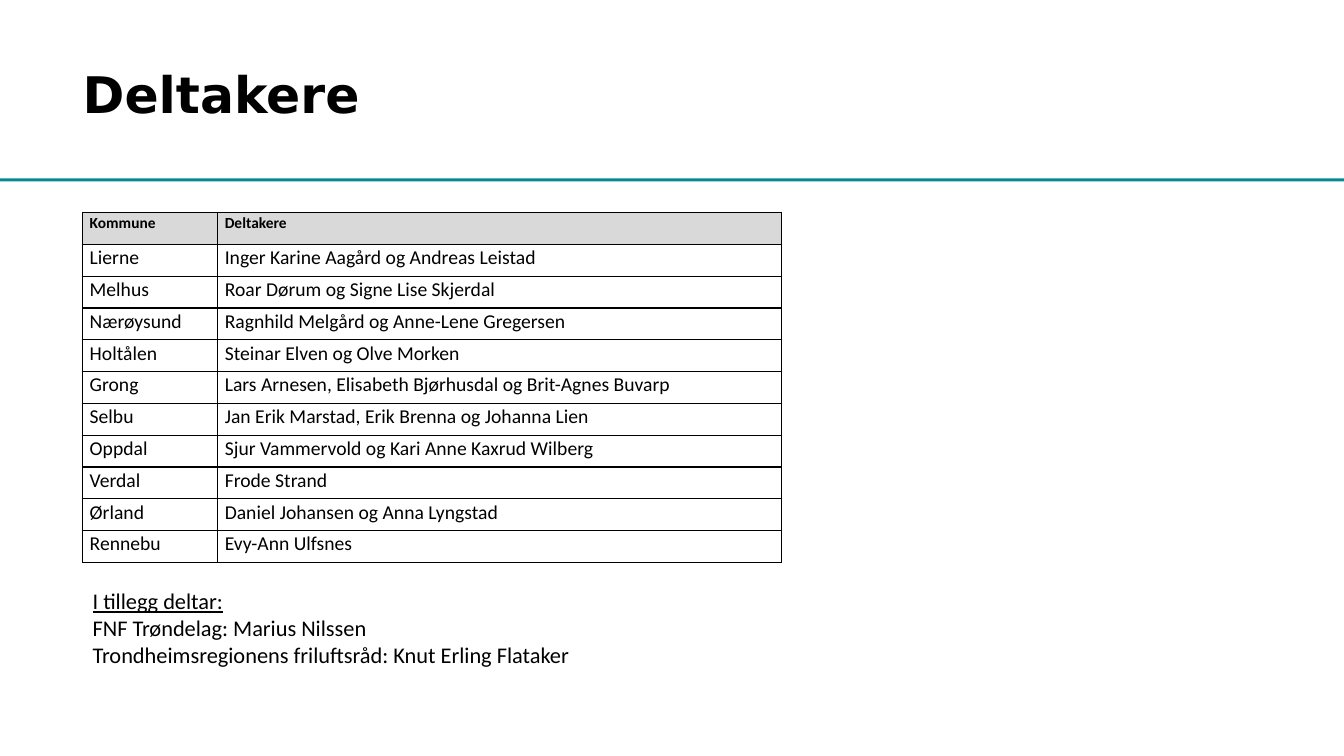
from pptx import Presentation
from pptx.dml.color import RGBColor as Rgb
from pptx.enum.shapes import MSO_SHAPE as Shape
from pptx.enum.text import MSO_ANCHOR as Anchor, PP_ALIGN as Align
from pptx.oxml import parse_xml
from pptx.oxml.ns import nsdecls
from pptx.util import Inches, Pt

# Theme: colours and type
theme = {
    "ink": "000000", "rule": "018A92", "head": "D9D9D9",
    "title": {"name": "DejaVu Sans", "size": Pt(36), "bold": True},
    "label": {"name": "Calibri", "size": Pt(11), "bold": True},
    "body": {"name": "Calibri", "size": Pt(14), "bold": False},
    "note": {"name": "Calibri", "size": Pt(16)},
}
left = Inches(0.82)


def style(para, kind, space=1.0):
    para.alignment = Align.LEFT
    para.line_spacing = space
    for key, value in theme[kind].items():
        setattr(para.font, key, value)
    para.font.color.rgb = Rgb.from_string(theme["ink"])


def place(item, *box):
    for key, value in zip(("left", "top", "width", "height"), box):
        setattr(item, key, value)


deck = Presentation()
deck.slide_width, deck.slide_height = Inches(13.33), Inches(7.5)
slide = deck.slides.add_slide(deck.slide_layouts[5])
items = slide.shapes

# Rule below the title
rule = items.add_shape(Shape.RECTANGLE, 0, Inches(1.77), deck.slide_width, Inches(0.03))
rule.shadow.inherit = False
rule.fill.solid()
rule.fill.fore_color.rgb = Rgb.from_string(theme["rule"])
rule.line.fill.background()

# Title
title = items.title
place(title, left, Inches(0.36), Inches(10.5), Inches(1.21))
frame = title.text_frame
frame.text = "Deltakere"
frame.vertical_anchor = Anchor.MIDDLE
for side in ("left", "right", "top", "bottom"):
    setattr(frame, f"margin_{side}", 0)
style(frame.paragraphs[0], "title", 0.9)

# Table of municipalities and participants
rows = [
    ("Kommune", "Deltakere"),
    ("Lierne", "Inger Karine Aagård og Andreas Leistad"),
    ("Melhus", "Roar Dørum og Signe Lise Skjerdal"),
    ("Nærøysund", "Ragnhild Melgård og Anne-Lene Gregersen"),
    ("Holtålen", "Steinar Elven og Olve Morken"),
    ("Grong", "Lars Arnesen, Elisabeth Bjørhusdal og Brit-Agnes Buvarp"),
    ("Selbu", "Jan Erik Marstad, Erik Brenna og Johanna Lien"),
    ("Oppdal", "Sjur Vammervold og Kari Anne Kaxrud Wilberg"),
    ("Verdal", "Frode Strand"),
    ("Ørland", "Daniel Johansen og Anna Lyngstad"),
    ("Rennebu", "Evy-Ann Ulfsnes"),
]
widths = (1.34, 5.59)
table = items.add_table(len(rows), len(widths), left, Inches(2.11),
                        Inches(sum(widths)), Inches(3.47)).table
table.horz_banding = False
for col, width in zip(table.columns, widths):
    col.width = Inches(width)

pads = {"margin_left": Inches(0.07), "margin_right": Inches(0.07),
        "margin_top": 0, "margin_bottom": 0}
for r, row in enumerate(rows):
    for c, text in enumerate(row):
        cell = table.cell(r, c)
        cell.text = text
        for key, value in pads.items():
            setattr(cell, key, value)
        style(cell.text_frame.paragraphs[0], "body" if r else "label", 1.07)
        # Borders come before the fill in the cell's XML
        props = cell._tc.get_or_add_tcPr()
        for edge in "LRTB":
            props.append(parse_xml(
                f'<a:ln{edge} {nsdecls("a")} w="{Pt(1)}"><a:solidFill>'
                f'<a:srgbClr val="{theme["ink"]}"/></a:solidFill></a:ln{edge}>'))
        if r:
            cell.fill.background()
        else:
            cell.fill.solid()
            cell.fill.fore_color.rgb = Rgb.from_string(theme["head"])

# Further participants
lines = ["I tillegg deltar:", "FNF Trøndelag: Marius Nilssen",
         "Trondheimsregionens friluftsråd: Knut Erling Flataker"]
note = items.add_textbox(left, Inches(5.78), Inches(7.11), Inches(1.18)).text_frame
note.word_wrap = True
note.text = "\n".join(lines)
for para in note.paragraphs:
    style(para, "note")
note.paragraphs[0].font.underline = True

deck.save("out.pptx")
